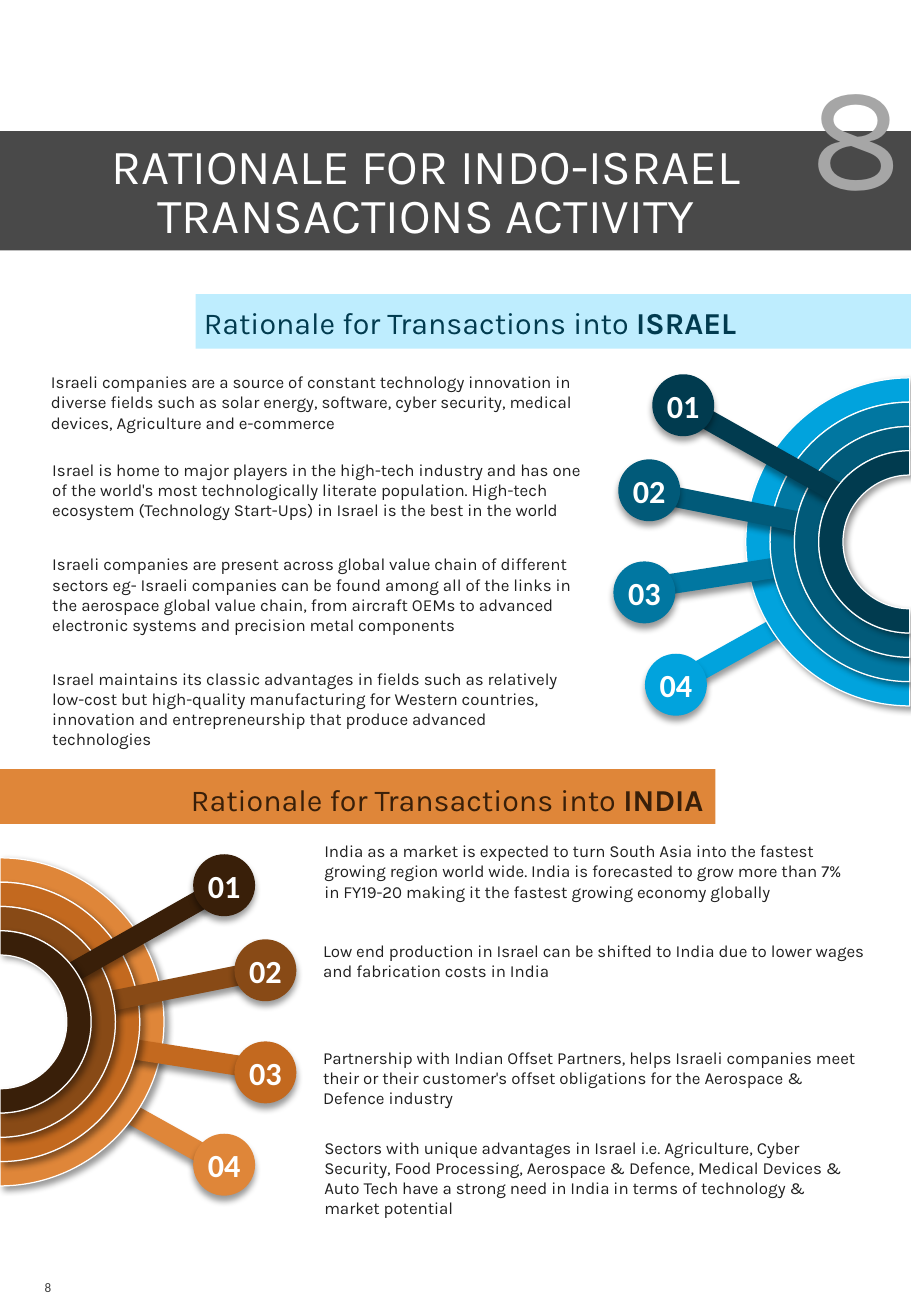
from lxml.etree import SubElement
from pptx import Presentation
from pptx.dml.color import RGBColor
from pptx.enum.shapes import MSO_CONNECTOR, MSO_SHAPE
from pptx.enum.text import MSO_ANCHOR, MSO_AUTO_SIZE, PP_ALIGN
from pptx.oxml.ns import qn
from pptx.util import Inches, Pt

WHITE = RGBColor(0xFF, 0xFF, 0xFF)
CHARCOAL = RGBColor(0x49, 0x49, 0x49)
SILVER = RGBColor(0xA6, 0xA6, 0xA6)
BODY = RGBColor(0x20, 0x20, 0x20)
FOLIO = RGBColor(0x40, 0x40, 0x40)
PALE_BLUE = RGBColor(0xBE, 0xED, 0xFE)
# Colours run from the inner ring (01) to the outer ring (04)
BLUES = [RGBColor(0x01, 0x3B, 0x4F), RGBColor(0x01, 0x5A, 0x79),
         RGBColor(0x01, 0x77, 0xA1), RGBColor(0x01, 0xA3, 0xDD)]
BROWNS = [RGBColor(0x39, 0x1F, 0x09), RGBColor(0x88, 0x4A, 0x16),
          RGBColor(0xC3, 0x69, 0x1F), RGBColor(0xDF, 0x86, 0x39)]

HOLE_RADIUS, RING_WIDTH = 0.55, 0.2
# Two quarter circles as Bezier points on a unit circle
HALF_CIRCLE = [(0, -1), (0.55, -1), (1, -0.55), (1, 0), (1, 0.55), (0.55, 1), (0, 1)]
BALL_SIZE = 0.51
# Heights from the fan's centre: spoke start, spoke end, ball top
FAN_HEIGHTS = [(-0.34, -1.1, -1.38), (-0.15, -0.42, -0.68),
               (0.2, 0.39, 0.16), (0.68, 1.17, 0.92)]
# Across the page: spoke start, spoke end, ball left
ISRAEL_FAN = [(7.01, 5.66, 5.37), (6.66, 5.31, 5.09),
              (6.46, 5.24, 5.05), (6.44, 5.56, 5.31)]
INDIA_FAN = [(0.48, 1.82, 1.59), (0.8, 2.15, 1.93),
             (0.94, 2.16, 1.93), (0.94, 1.82, 1.59)]

# Left, top, width, height, text
ISRAEL_REASONS = [
    (0.42, 3.01, 4.64, 0.61, "Israeli companies are a source of constant technology innovation in diverse "
     "fields such as solar energy, software, cyber security, medical devices, Agriculture and e-commerce"),
    (0.43, 3.73, 4.41, 0.61, "Israel is home to major players in the high-tech industry and has one of the "
     "world's most technologically literate population. High-tech ecosystem (Technology Start-Ups) in "
     "Israel is the best in the world"),
    (0.43, 4.51, 4.41, 0.77, "Israeli companies are present across global value chain of different sectors "
     "eg- Israeli companies can be found among all of the links in the aerospace global value chain, from "
     "aircraft OEMs to advanced electronic systems and precision metal components"),
    (0.43, 5.45, 4.41, 0.61, "Israel maintains its classic advantages in fields such as relatively low-cost "
     "but high-quality manufacturing for Western countries, innovation and entrepreneurship that produce "
     "advanced technologies"),
]
INDIA_REASONS = [
    (2.67, 6.87, 4.34, 0.61, "India as a market is expected to turn South Asia into the fastest growing "
     "region world wide. India is forecasted to grow more than 7% in FY19-20 making it the fastest growing "
     "economy globally"),
    (2.66, 7.69, 4.46, 0.44, "Low end production in Israel can be shifted to India due to lower wages and "
     "fabrication costs in India"),
    (2.66, 8.57, 4.46, 0.61, "Partnership with Indian Offset Partners, helps Israeli companies meet their "
     "or their customer's offset obligations for the Aerospace & Defence industry"),
    (2.67, 9.31, 4.34, 0.77, "Sectors with unique advantages in Israel i.e. Agriculture, Cyber Security, "
     "Food Processing, Aerospace & Defence, Medical Devices & Auto Tech have a strong need in India in "
     "terms of technology & market potential"),
]


def add_shadow(shape, angle):
    """Soft black shadow; call after fill and line are set."""
    effects = SubElement(shape.element.spPr, qn("a:effectLst"))
    outer = SubElement(effects, qn("a:outerShdw"), blurRad=str(Pt(4)), dist=str(Pt(3)),
                       dir=str(angle * 60000), algn="ctr", rotWithShape="0")
    colour = SubElement(outer, qn("a:srgbClr"), val="000000")
    SubElement(colour, qn("a:alpha"), val="40000")


def set_insets(frame, left, top, right, bottom):
    frame.margin_left, frame.margin_top = Inches(left), Inches(top)
    frame.margin_right, frame.margin_bottom = Inches(right), Inches(bottom)


def write(para, runs, size, colour, font="Karla", align=PP_ALIGN.LEFT, spacing=None):
    """Fill a paragraph from (text, bold) pairs."""
    para.alignment = align
    if spacing:
        para.line_spacing = Pt(spacing)
    for text, bold in runs:
        span = para.add_run()
        span.text = text
        span.font.name, span.font.size, span.font.bold = font, Pt(size), bold
        span.font.color.rgb = colour


def add_text(page, place, runs, size, colour, insets=(0.1, 0.05, 0.1, 0.05), wrap=True, **style):
    box = page.shapes.add_textbox(*map(Inches, place))
    frame = box.text_frame
    frame.word_wrap = wrap
    frame.auto_size = MSO_AUTO_SIZE.SHAPE_TO_FIT_TEXT
    set_insets(frame, *insets)
    write(frame.paragraphs[0], runs, size, colour, **style)


def add_filled(page, kind, place, colour):
    shape = page.shapes.add_shape(kind, *map(Inches, place))
    shape.fill.solid()
    shape.fill.fore_color.rgb = colour
    shape.line.fill.background()
    return shape


def add_spoke(page, start, end, colour):
    spoke = page.shapes.add_connector(MSO_CONNECTOR.STRAIGHT, *map(Inches, start + end))
    spoke.line.color.rgb = colour
    spoke.line.width = Pt(12)
    add_shadow(spoke, 90)


def add_ball(page, left, top, number, colour):
    ball = add_filled(page, MSO_SHAPE.OVAL, (left, top, BALL_SIZE, BALL_SIZE), colour)
    add_shadow(ball, 90)
    frame = ball.text_frame
    set_insets(frame, 0, 0.03, 0, 0.03)
    frame.vertical_anchor = MSO_ANCHOR.MIDDLE
    write(frame.paragraphs[0], [(f"{number:02}", True)], 19.1, WHITE, "Calibri", PP_ALIGN.CENTER)


def bend_segments(ring):
    """Turn each three straight steps of both arcs into one Bezier curve."""
    outline = next(ring.element.iter(qn("a:path")))
    steps = outline.findall(qn("a:lnTo"))
    for first in (0, 3, 7, 10):
        curve = SubElement(outline, qn("a:cubicBezTo"))
        steps[first].addprevious(curve)
        for step in steps[first:first + 3]:
            curve.append(step[0])
            outline.remove(step)


def add_half_ring(page, centre, side, inner, colour):
    """Half ring that bulges to the right (side 1) or the left (side -1)."""
    def arc(radius):
        return [(Inches(centre[0] + side * radius * x), Inches(centre[1] + radius * y))
                for x, y in HALF_CIRCLE]

    points = arc(inner + RING_WIDTH) + arc(inner)[::-1]
    builder = page.shapes.build_freeform(*points[0])
    builder.add_line_segments(points[1:], close=True)
    ring = builder.convert_to_shape()
    bend_segments(ring)
    ring.fill.solid()
    ring.fill.fore_color.rgb = colour
    ring.line.color.rgb = WHITE
    ring.line.width = Pt(0)
    add_shadow(ring, 45)


def add_fan(page, centre, side, columns, colours):
    """Four numbered spokes on half rings, outermost at the back."""
    middle = centre[1]
    for index in reversed(range(len(columns))):
        start_x, end_x, left = columns[index]
        start_y, end_y, top = FAN_HEIGHTS[index]
        colour = colours[index]
        add_spoke(page, (start_x, middle + start_y), (end_x, middle + end_y), colour)
        add_ball(page, left, middle + top, index + 1, colour)
        add_half_ring(page, centre, side, HOLE_RADIUS + index * RING_WIDTH, colour)


def add_reasons(page, reasons):
    for *place, text in reasons:
        add_text(page, place, [(text, False)], 10, BODY, insets=(0, 0.05, 0, 0.05))


def add_heading(page, bar, bar_colour, place, country, colour, align):
    add_filled(page, MSO_SHAPE.RECTANGLE, bar, bar_colour).shadow.inherit = False
    add_text(page, place, [("Rationale for Transactions into ", False), (country, True)],
             18, colour, align=align, spacing=22)


def set_title(page):
    title = page.shapes.title
    title.left, title.top, title.width, title.height = map(Inches, (0, 1.08, 7.5, 0.98))
    title.fill.solid()
    title.fill.fore_color.rgb = CHARCOAL
    frame = title.text_frame
    frame.word_wrap = True
    frame.auto_size = MSO_AUTO_SIZE.NONE
    frame.vertical_anchor = MSO_ANCHOR.TOP
    set_insets(frame, 0.63, 0.12, 1.11, 0)
    write(frame.paragraphs[0], [("RATIONALE FOR INDO-ISRAEL TRANSACTIONS ACTIVITY", False)],
          29, WHITE, align=PP_ALIGN.CENTER, spacing=29)


def main():
    deck = Presentation()
    deck.slide_width, deck.slide_height = Inches(7.5), Inches(10.83)
    page = deck.slides.add_slide(deck.slide_layouts[5])
    # Title band and chapter number
    set_title(page)
    add_text(page, (6.55, 1.4, 0.33, 0.67), [("8", False)], 88, SILVER,
             insets=(0.12, 0.06, 0.12, 0.06), align=PP_ALIGN.CENTER, spacing=25)
    # Israel
    add_fan(page, (7.49, 4.46), -1, ISRAEL_FAN, BLUES)
    add_reasons(page, ISRAEL_REASONS)
    add_heading(page, (1.61, 2.42, 5.89, 0.45), PALE_BLUE, (1.58, 2.45, 5.33, 0.41),
                "ISRAEL", BLUES[0], PP_ALIGN.LEFT)
    # India
    add_fan(page, (0, 8.41), 1, INDIA_FAN, BROWNS)
    add_reasons(page, INDIA_REASONS)
    add_heading(page, (0, 6.33, 5.89, 0.45), BROWNS[3], (0.82, 6.37, 5.07, 0.41),
                "INDIA", BROWNS[0], PP_ALIGN.RIGHT)
    # Page number
    add_text(page, (0.27, 10.48, 0.26, 0.23), [("8", False)], 7.8, FOLIO, wrap=False, font="Calibri")
    deck.save("out.pptx")


if __name__ == "__main__":
    main()
